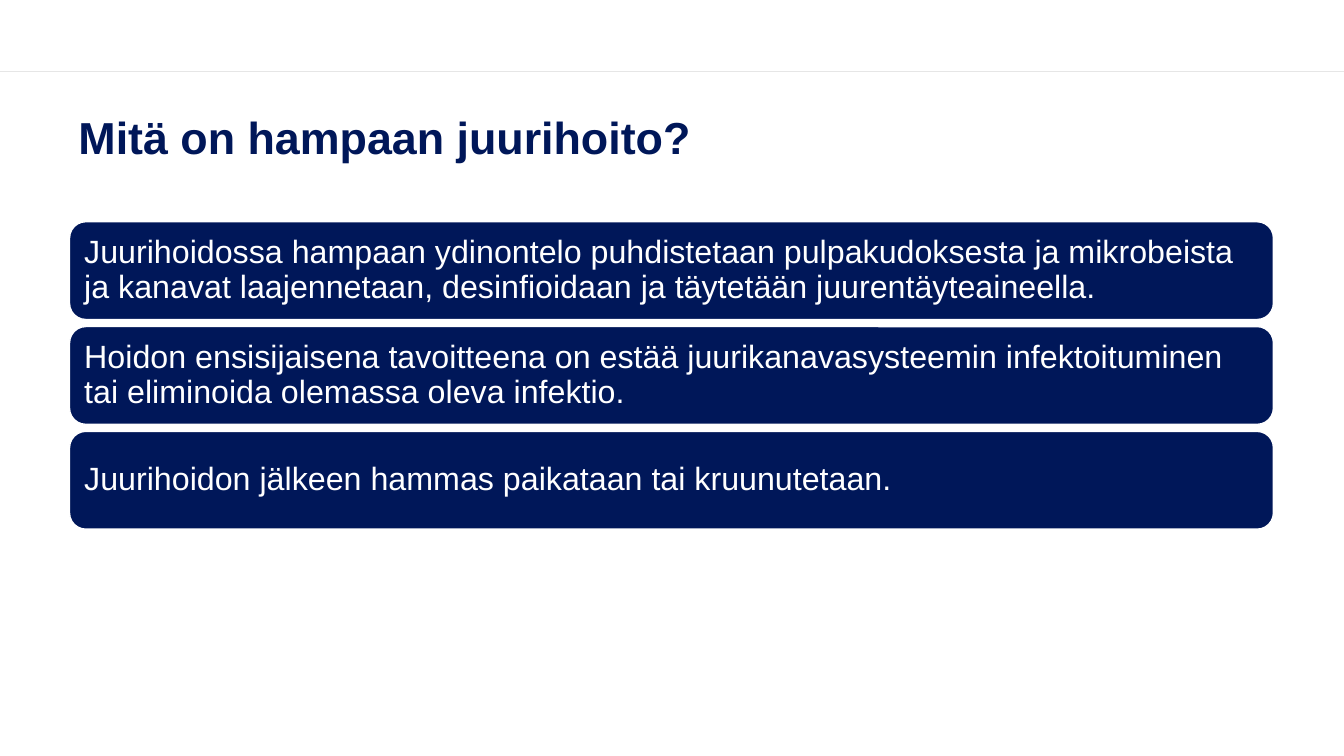
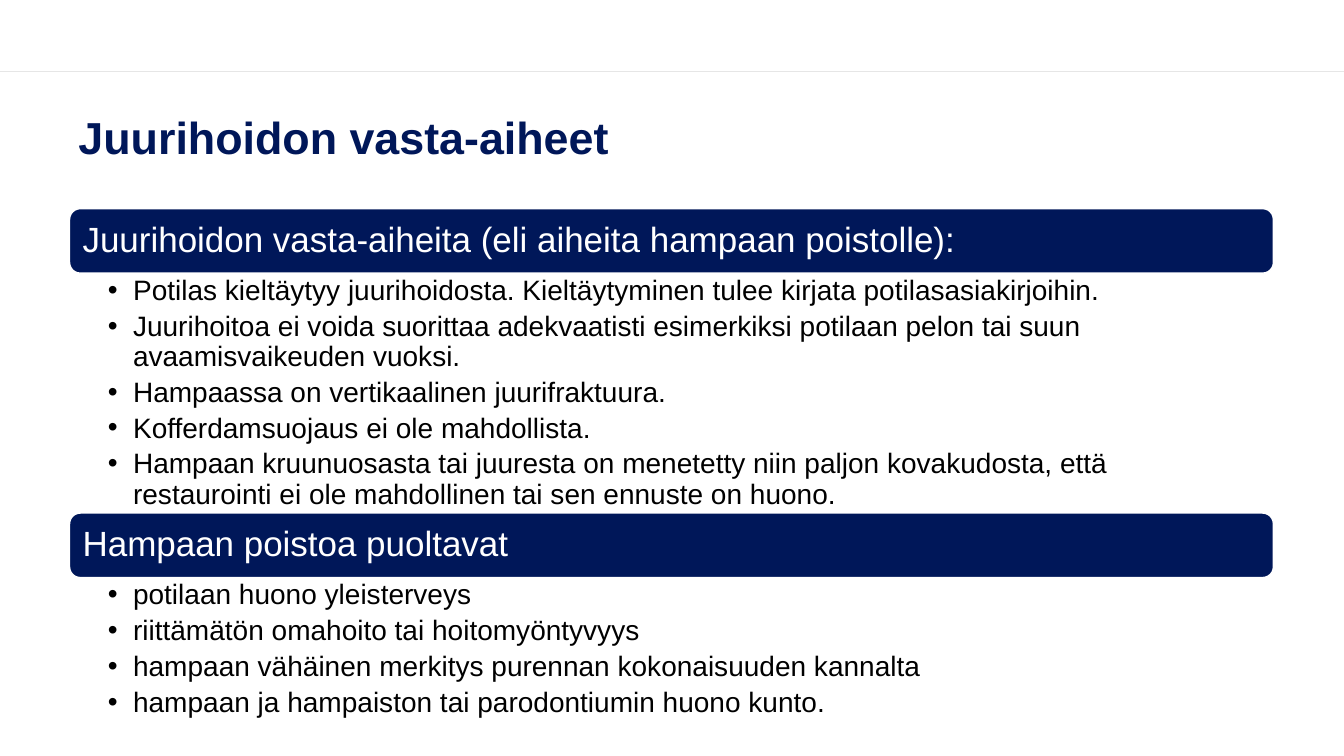
from lxml.etree import SubElement
from pptx import Presentation
from pptx.dml.color import RGBColor
from pptx.enum.shapes import MSO_CONNECTOR, MSO_SHAPE
from pptx.enum.text import MSO_ANCHOR, PP_ALIGN
from pptx.oxml.ns import qn
from pptx.util import Inches, Pt

NAVY, WHITE, BLACK, RULE_GREY = "001759", "FFFFFF", "000000", "E6E6E6"
FONT = "Arial"
WIDTH, HEIGHT = 13.33, 7.5
LEFT, BODY_WIDTH = 0.69, 11.94
RULE_TOP = 0.71

DEFINITION = {
    "title": "Mitä on hampaan juurihoito?",
    "statements": [
        "Juurihoidossa hampaan ydinontelo puhdistetaan pulpakudoksesta ja mikrobeista "
        "ja kanavat laajennetaan, desinfioidaan ja täytetään juurentäyteaineella.",
        "Hoidon ensisijaisena tavoitteena on estää juurikanavasysteemin infektoituminen "
        "tai eliminoida olemassa oleva infektio.",
        "Juurihoidon jälkeen hammas paikataan tai kruunutetaan.",
    ],
}
CONTRAINDICATIONS = {
    "title": "Juurihoidon vasta-aiheet",
    "sections": [
        ("Juurihoidon vasta-aiheita (eli aiheita hampaan poistolle):", 2.38, [
            "Potilas kieltäytyy juurihoidosta. Kieltäytyminen tulee kirjata potilasasiakirjoihin.",
            "Juurihoitoa ei voida suorittaa adekvaatisti esimerkiksi potilaan pelon tai suun "
            "avaamisvaikeuden vuoksi.",
            "Hampaassa on vertikaalinen juurifraktuura.",
            "Kofferdamsuojaus ei ole mahdollista.",
            "Hampaan kruunuosasta tai juuresta on menetetty niin paljon kovakudosta, että "
            "restaurointi ei ole mahdollinen tai sen ennuste on huono.",
        ]),
        ("Hampaan poistoa puoltavat", 1.41, [
            "potilaan huono yleisterveys",
            "riittämätön omahoito tai hoitomyöntyvyys",
            "hampaan vähäinen merkitys purennan kokonaisuuden kannalta",
            "hampaan ja hampaiston tai parodontiumin huono kunto.",
        ]),
    ],
}


def rgb(value):
    return RGBColor.from_string(value)


def set_frame(shape, insets, anchor):
    """Wrap the text and set its insets (left, top, right, bottom) and anchor."""
    frame = shape.text_frame
    frame.word_wrap = True
    frame.vertical_anchor = anchor
    (frame.margin_left, frame.margin_top,
     frame.margin_right, frame.margin_bottom) = map(Inches, insets)
    return frame


def style(para, size, color, bold=False):
    para.alignment = PP_ALIGN.LEFT
    para.line_spacing = 0.9
    font = para.font
    font.name, font.size, font.bold = FONT, Pt(size), bold
    font.color.rgb = rgb(color)


def add_bullet(para):
    properties = para._p.get_or_add_pPr()
    properties.set("marL", str(Inches(0.25)))
    properties.set("indent", str(-Inches(0.25)))
    SubElement(properties, qn("a:buFont"), typeface=FONT)
    SubElement(properties, qn("a:buChar"), char="•")


def add_page(deck, title):
    page = deck.slides.add_slide(deck.slide_layouts[6])
    rule = page.shapes.add_connector(
        MSO_CONNECTOR.STRAIGHT, 0, Inches(RULE_TOP), Inches(WIDTH), Inches(RULE_TOP))
    rule.line.color.rgb = rgb(RULE_GREY)
    rule.line.width = Pt(1)
    SubElement(rule._element.spPr, qn("a:effectLst"))
    box = page.shapes.add_textbox(
        Inches(0.68), Inches(0.93), Inches(BODY_WIDTH), Inches(0.91))
    frame = set_frame(box, (0.1, 0.05, 0.1, 0.05), MSO_ANCHOR.MIDDLE)
    frame.text = title
    style(frame.paragraphs[0], 32, NAVY, bold=True)
    return page


def add_band(page, text, top, height, size):
    band = page.shapes.add_shape(
        MSO_SHAPE.ROUNDED_RECTANGLE,
        Inches(LEFT), Inches(top), Inches(BODY_WIDTH), Inches(height))
    band.shadow.inherit = False
    band.fill.solid()
    band.fill.fore_color.rgb = rgb(NAVY)
    band.line.color.rgb = rgb(WHITE)
    band.line.width = Pt(1)
    frame = set_frame(band, (0.1,) * 4, MSO_ANCHOR.MIDDLE)
    frame.text = text
    style(frame.paragraphs[0], size, WHITE)


def add_bullet_list(page, items, top, height):
    box = page.shapes.add_textbox(
        Inches(LEFT), Inches(top), Inches(BODY_WIDTH), Inches(height))
    frame = set_frame(box, (0.38, 0.03, 0.19, 0.03), MSO_ANCHOR.TOP)
    for index, item in enumerate(items):
        para = frame.add_paragraph() if index else frame.paragraphs[0]
        para.text = item
        add_bullet(para)
        style(para, 20, BLACK)
        para.space_after = Pt(4)


def build_definition(deck):
    page = add_page(deck, DEFINITION["title"])
    first_top, height, pitch = 2.2, 0.97, 1.04
    for index, statement in enumerate(DEFINITION["statements"]):
        add_band(page, statement, first_top + index * pitch, height, 23)


def build_contraindications(deck):
    page = add_page(deck, CONTRAINDICATIONS["title"])
    top, band_height = 2.07, 0.64
    for heading, list_height, items in CONTRAINDICATIONS["sections"]:
        add_band(page, heading, top, band_height, 25)
        top += band_height
        add_bullet_list(page, items, top, list_height)
        top += list_height


def main():
    deck = Presentation()
    deck.slide_width, deck.slide_height = Inches(WIDTH), Inches(HEIGHT)
    build_definition(deck)
    build_contraindications(deck)
    deck.save("out.pptx")


if __name__ == "__main__":
    main()
